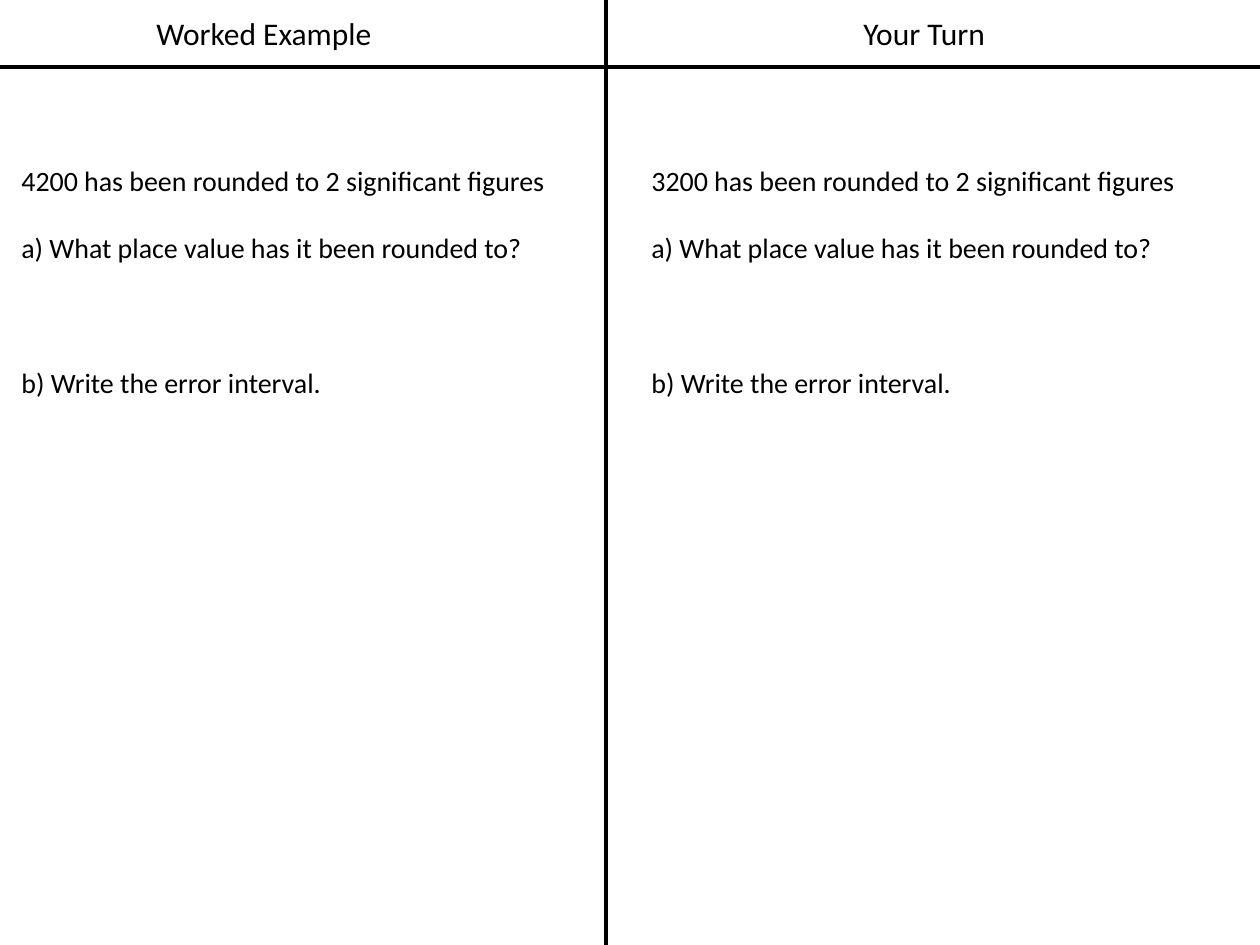
from dataclasses import dataclass

from pptx import Presentation
from pptx.dml.color import RGBColor
from pptx.enum.shapes import MSO_CONNECTOR
from pptx.enum.text import MSO_AUTO_SIZE, PP_ALIGN
from pptx.oxml.ns import qn
from pptx.util import Inches, Pt
from lxml.etree import SubElement


@dataclass(frozen=True)
class Theme:
    font: str = "Calibri"
    ink: RGBColor = RGBColor(0, 0, 0)
    heading: Pt = Pt(18)
    body: Pt = Pt(16)
    rule: Pt = Pt(2.5)


THEME = Theme()
WIDTH, HEIGHT = 10, 7.5


def set_font(p, size):
    p.font.name = THEME.font
    p.font.size = size
    p.font.color.rgb = THEME.ink


def add_text_box(s, left, top, width, height):
    sp = s.shapes.add_textbox(Inches(left), Inches(top), Inches(width), Inches(height))
    tf = sp.text_frame
    tf.word_wrap = True
    return tf


def add_heading(s, left, text):
    tf = add_text_box(s, left, 0.06, 1.93, 0.4)
    tf.auto_size = MSO_AUTO_SIZE.SHAPE_TO_FIT_TEXT
    p = tf.paragraphs[0]
    p.text = text
    p.alignment = PP_ALIGN.CENTER
    set_font(p, THEME.heading)


def add_question(s, left, number):
    tf = add_text_box(s, left, 1.26, 4.54, 2.16)
    tf.margin_left = tf.margin_right = Inches(0.04)
    tf.margin_top = tf.margin_bottom = Inches(0.04)
    lines = [
        (f"{number} has been rounded to 2 significant figures", 0),
        ("a) What place value has it been rounded to?", 19),
        ("b) Write the error interval.", 58),
    ]
    for i, (text, gap) in enumerate(lines):
        p = tf.add_paragraph() if i else tf.paragraphs[0]
        p.text = text
        p.space_before = Pt(gap)
        set_font(p, THEME.body)


def add_rule(s, x1, y1, x2, y2):
    line = s.shapes.add_connector(
        MSO_CONNECTOR.STRAIGHT, Inches(x1), Inches(y1), Inches(x2), Inches(y2)
    )
    line.line.color.rgb = THEME.ink
    line.line.width = THEME.rule
    SubElement(line._element.spPr, qn("a:effectLst"))


def main():
    prs = Presentation()
    prs.slide_width, prs.slide_height = Inches(WIDTH), Inches(HEIGHT)
    s = prs.slides.add_slide(prs.slide_layouts[6])

    add_rule(s, 4.81, 0, 4.81, HEIGHT)
    add_rule(s, 0, 0.53, WIDTH, 0.53)
    columns = [
        ("Worked Example", 1.13, 0.13, 4200),
        ("Your Turn", 6.37, 5.13, 3200),
    ]
    for title, title_left, question_left, number in columns:
        add_heading(s, title_left, title)
        add_question(s, question_left, number)

    prs.save("out.pptx")


if __name__ == "__main__":
    main()
